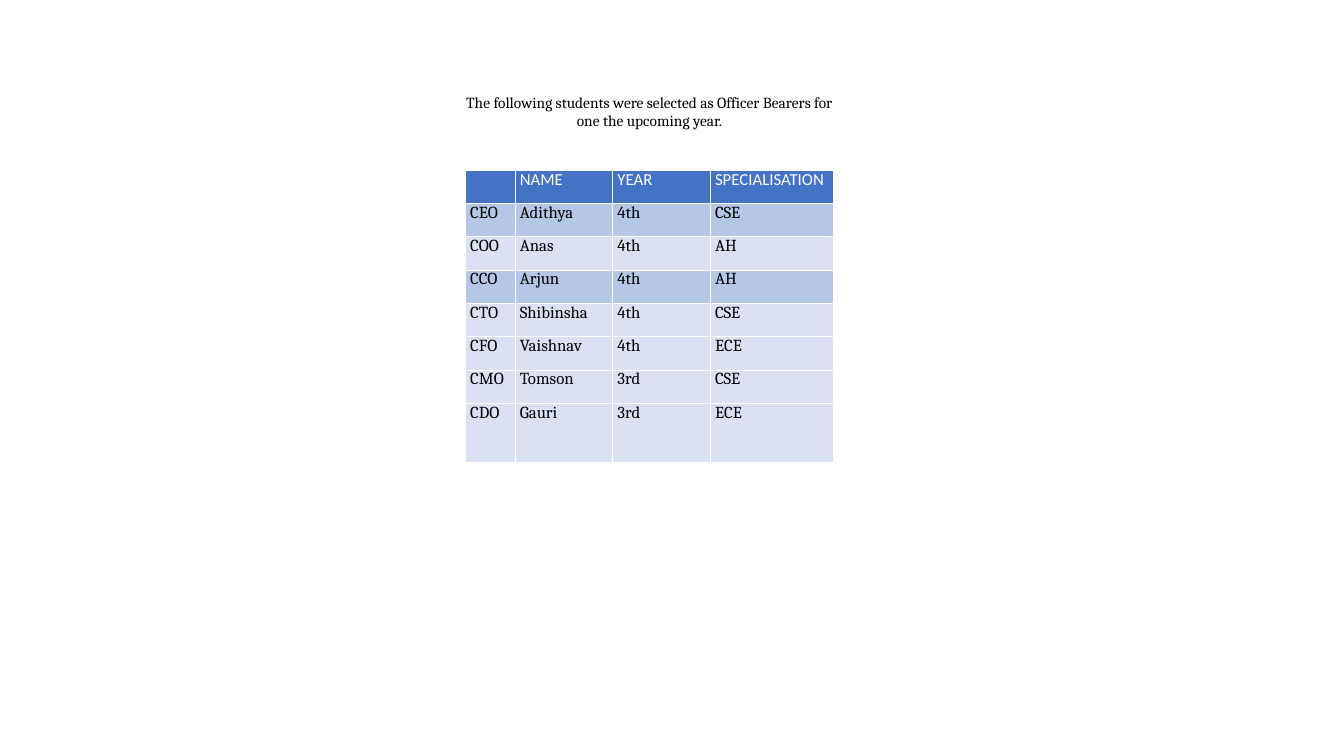
from lxml import etree
from pptx import Presentation
from pptx.dml.color import RGBColor
from pptx.enum.text import MSO_ANCHOR, PP_ALIGN
from pptx.oxml.ns import qn
from pptx.util import Cm, Pt

CENTER = PP_ALIGN.CENTER
TOP = MSO_ANCHOR.TOP

WHITE = RGBColor(0xFF, 0xFF, 0xFF)
BLACK = RGBColor(0x00, 0x00, 0x00)
HEADER_BLUE = RGBColor(0x44, 0x72, 0xC5)
MID_BLUE = RGBColor(0xB5, 0xC7, 0xE7)
PALE_BLUE = RGBColor(0xD9, 0xE1, 0xF3)

INTRODUCTION = ("The following students were selected as Officer Bearers "
                "for one the upcoming year.")
OFFICERS = [
    ("", "NAME", "YEAR", "SPECIALISATION"),
    ("CEO", "Adithya", "4th", "CSE"),
    ("COO", "Anas", "4th", "AH"),
    ("CCO", "Arjun", "4th", "AH"),
    ("CTO", "Shibinsha", "4th", "CSE"),
    ("CFO", "Vaishnav", "4th", "ECE"),
    ("CMO", "Tomson", "3rd", "CSE"),
    ("CDO", "Gauri", "3rd", "ECE"),
]
ROW_FILLS = [HEADER_BLUE, MID_BLUE, PALE_BLUE, MID_BLUE] + [PALE_BLUE] * 4
COLUMN_WIDTHS = [Cm(1.25), Cm(2.46), Cm(2.46), Cm(3.11)]
ROW_HEIGHTS = [Cm(0.84)] * 7 + [Cm(1.5)]


def format_runs(paragraph, font_name, size, color):
    for run in paragraph.runs:
        run.font.name = font_name
        run.font.size = size
        run.font.color.rgb = color


def add_introduction(slide, left, top, width, height):
    text_frame = slide.shapes.add_textbox(left, top, width, height).text_frame
    text_frame.word_wrap = True
    text_frame.margin_left = text_frame.margin_right = text_frame.margin_bottom = 0
    text_frame.margin_top = Cm(0.03)
    text_frame.text = INTRODUCTION
    paragraph = text_frame.paragraphs[0]
    paragraph.alignment = CENTER
    format_runs(paragraph, "Cambria", Pt(11), BLACK)


def add_cell_borders(cell):
    properties = cell._tc.get_or_add_tcPr()
    # Border elements come before the fill
    for position, side in enumerate(("a:lnL", "a:lnR", "a:lnT", "a:lnB")):
        line = etree.Element(qn(side), w=str(Pt(0.5)))
        fill = etree.SubElement(line, qn("a:solidFill"))
        etree.SubElement(fill, qn("a:srgbClr"), val=str(WHITE))
        properties.insert(position, line)


def add_officer_table(slide, left, top, width, height):
    frame = slide.shapes.add_table(len(OFFICERS), len(COLUMN_WIDTHS),
                                   left, top, width, height)
    table = frame.table
    for column, column_width in zip(table.columns, COLUMN_WIDTHS):
        column.width = column_width
    for row, row_height in zip(table.rows, ROW_HEIGHTS):
        row.height = row_height

    for row_index, (values, fill) in enumerate(zip(OFFICERS, ROW_FILLS)):
        font_name, color = ("Cambria", BLACK) if row_index else ("Calibri", WHITE)
        for column_index, value in enumerate(values):
            cell = table.cell(row_index, column_index)
            cell.margin_left = cell.margin_right = Cm(0.12)
            cell.margin_top = cell.margin_bottom = 0
            cell.vertical_anchor = TOP
            cell.fill.solid()
            cell.fill.fore_color.rgb = fill
            add_cell_borders(cell)
            cell.text_frame.text = value
            paragraph = cell.text_frame.paragraphs[0]
            format_runs(paragraph, font_name, Pt(12), color)
            for run in paragraph.runs:
                run.font.bold = False


def main():
    presentation = Presentation()
    presentation.slide_width = Cm(33.87)
    presentation.slide_height = Cm(19.05)
    slide = presentation.slides.add_slide(presentation.slide_layouts[6])

    left, width = Cm(11.73), sum(COLUMN_WIDTHS)
    add_introduction(slide, left, Cm(2.31), width, Cm(0.97))
    add_officer_table(slide, left, Cm(4.28), width, sum(ROW_HEIGHTS))

    presentation.save("out.pptx")


if __name__ == "__main__":
    main()
